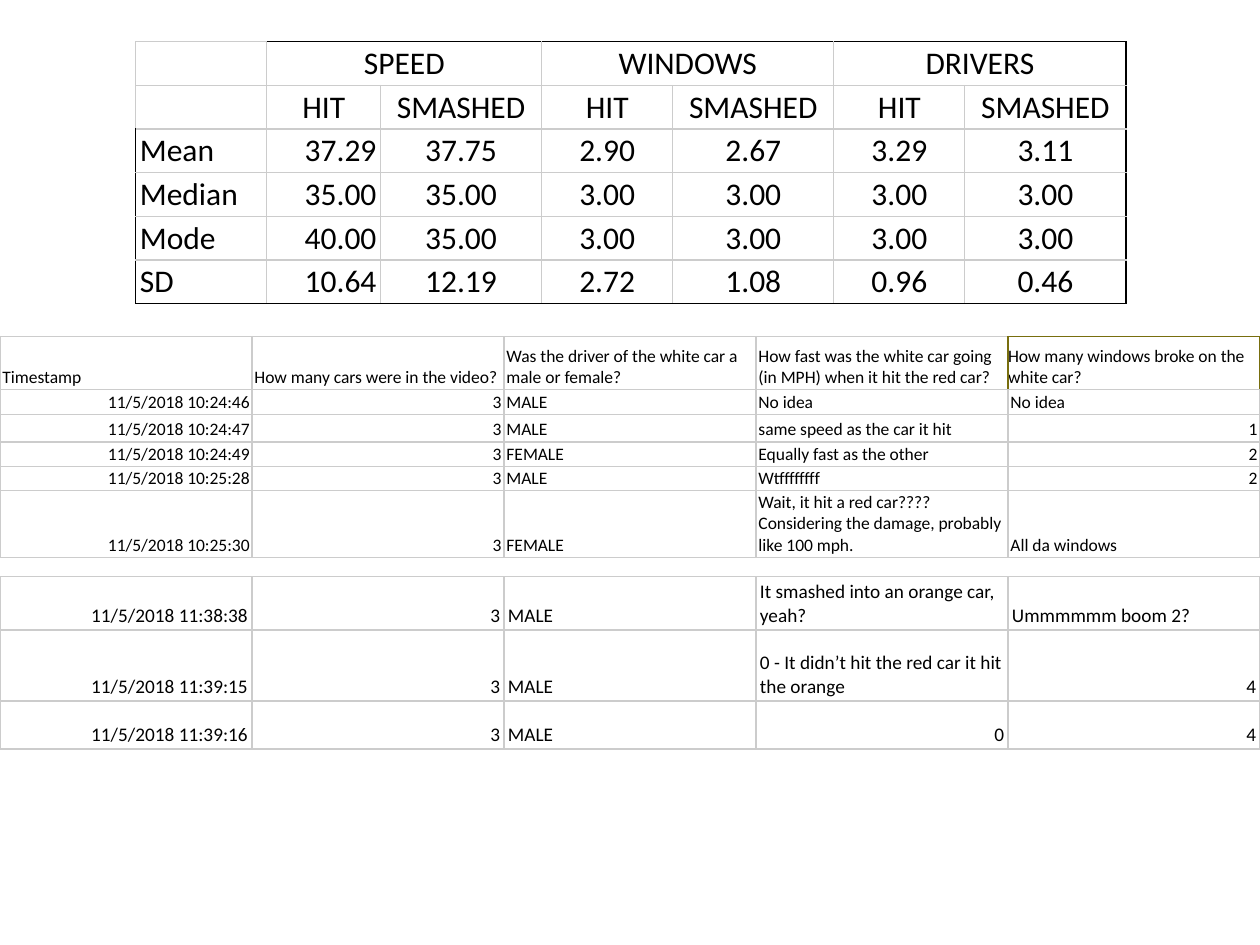
from pptx import Presentation
from pptx.dml.color import RGBColor as Rgb
from pptx.enum.text import MSO_ANCHOR as Anchor, PP_ALIGN as Align
from pptx.oxml.ns import qn
from pptx.util import Cm, Pt
from lxml.etree import Element, SubElement

COLOURS = {"text": "000000", "grid": "CCCCCC", "frame": "000000", "marked": "786E0E"}
SIDES = ("L", "R", "T", "B")


class SlideWriter:
    font = "Calibri"
    border_width = Pt(0.75)

    def __init__(self, slide):
        self.slide = slide

    def draw_borders(self, cell, colours):
        """Draw all four sides, in grid grey unless colours names another."""
        properties = cell._tc.get_or_add_tcPr()
        for index, side in enumerate(SIDES):
            line = Element(qn(f"a:ln{side}"), w=str(self.border_width))
            fill = SubElement(line, qn("a:solidFill"))
            SubElement(fill, qn("a:srgbClr"), val=COLOURS[colours.get(side, "grid")])
            properties.insert(index, line)

    def write_cell(self, cell, text, size, inset, align):
        cell.fill.background()
        cell.vertical_anchor = Anchor.BOTTOM
        cell.margin_left = cell.margin_right = Cm(inset[0])
        cell.margin_top = cell.margin_bottom = Cm(inset[1])
        para = cell.text_frame.paragraphs[0]
        para.alignment = align
        para.font.size = Pt(size)
        if text:
            span = para.add_run()
            span.text = text
            span.font.name = self.font
            span.font.size = Pt(size)
            span.font.color.rgb = Rgb.from_string(COLOURS["text"])

    def add_table(self, left, top, widths, heights, rows, size, inset, align, borders):
        """align(row, column, text) and borders(row, column) give each cell's look."""
        frame = self.slide.shapes.add_table(
            len(rows), len(widths), Cm(left), Cm(top), Cm(sum(widths)), Cm(sum(heights)))
        table = frame.table
        table.first_row = table.horz_banding = False
        for column, width in zip(table.columns, widths):
            column.width = Cm(width)
        for row, height in zip(table.rows, heights):
            row.height = Cm(height)
        for r, texts in enumerate(rows):
            for c, text in enumerate(texts):
                cell = table.cell(r, c)
                self.write_cell(cell, text, size, inset, align(r, c, text))
                self.draw_borders(cell, borders(r, c))
        return table


# Summary statistics
STATISTICS = [
    ["", "SPEED", "", "WINDOWS", "", "DRIVERS", ""],
    [""] + ["HIT", "SMASHED"] * 3,
    ["Mean", "37.29", "37.75", "2.90", "2.67", "3.29", "3.11"],
    ["Median", "35.00", "35.00"] + ["3.00"] * 4,
    ["Mode", "40.00", "35.00"] + ["3.00"] * 4,
    ["SD", "10.64", "12.19", "2.72", "1.08", "0.96", "0.46"],
]
GROUP_STARTS = (1, 3, 5)

# Survey answers
FIRST_ANSWERS = [
    ["Timestamp", "How many cars were in the video?",
     "Was the driver of the white car a male or female?",
     "How fast was the white car going (in MPH) when it hit the red car?",
     "How many windows broke on the white car?"],
    ["11/5/2018 10:24:46", "3", "MALE", "No idea", "No idea"],
    ["11/5/2018 10:24:47", "3", "MALE", "same speed as the car it hit", "1"],
    ["11/5/2018 10:24:49", "3", "FEMALE", "Equally fast as the other", "2"],
    ["11/5/2018 10:25:28", "3", "MALE", "Wtffffffff", "2"],
    ["11/5/2018 10:25:30", "3", "FEMALE",
     "Wait, it hit a red car???? Considering the damage, probably like 100 mph.",
     "All da windows"],
]
LATER_ANSWERS = [
    ["11/5/2018 11:38:38", "3", "MALE", "It smashed into an orange car, yeah?",
     "Ummmmmm boom 2?"],
    ["11/5/2018 11:39:15", "3", "MALE",
     "0 - It didn’t hit the red car it hit the orange", "4"],
    ["11/5/2018 11:39:16", "3", "MALE", "0", "4"],
]


def statistics_align(row, column, text):
    if column == 0:
        return Align.LEFT
    return Align.RIGHT if column == 1 and row > 1 else Align.CENTER


def statistics_borders(row, column):
    """Black frame that leaves out the empty top left corner."""
    framed = {
        "L": column == 0 and row > 1,
        "R": column == 6 or (row == 0 and column == GROUP_STARTS[-1]),
        "T": row == 0 and column > 0,
        "B": row == len(STATISTICS) - 1,
    }
    return {side: "frame" for side, black in framed.items() if black}


def answer_align(row, column, text):
    return Align.RIGHT if text[-1].isdigit() else Align.LEFT


def marked_header_borders(row, column):
    """The last question is outlined on three sides."""
    if row == 0 and column == 3:
        return {"R": "marked"}
    return dict.fromkeys("LRT", "marked") if (row, column) == (0, 4) else {}


def main():
    deck = Presentation()
    deck.slide_width, deck.slide_height = Cm(25.4), Cm(19.05)
    writer = SlideWriter(deck.slides.add_slide(deck.slide_layouts[6]))

    # Statistics table with a merged heading over each pair of columns
    statistics = writer.add_table(
        2.74, 0.84, [2.64, 2.29, 3.25] + [2.64, 3.25] * 2, [0.88] * 6, STATISTICS,
        18, (0.08, 0.05), statistics_align, statistics_borders)
    for start in GROUP_STARTS:
        statistics.cell(0, start).merge(statistics.cell(0, start + 1))

    # Survey tables across the full slide width
    answer_widths = [5.08] * 5
    first = writer.add_table(
        0, 6.78, answer_widths, [1.08, 0.48, 0.56, 0.48, 0.48, 1.34], FIRST_ANSWERS,
        10, (0.05, 0.03), answer_align, marked_header_borders)
    marked = first.cell(0, 4)
    marked.margin_left = marked.margin_right = Cm(0)
    writer.add_table(
        0, 11.63, answer_widths, [1.07, 1.43, 0.97], LATER_ANSWERS,
        11, (0.08, 0.05), answer_align, lambda row, column: {})

    deck.save("out.pptx")


if __name__ == "__main__":
    main()
